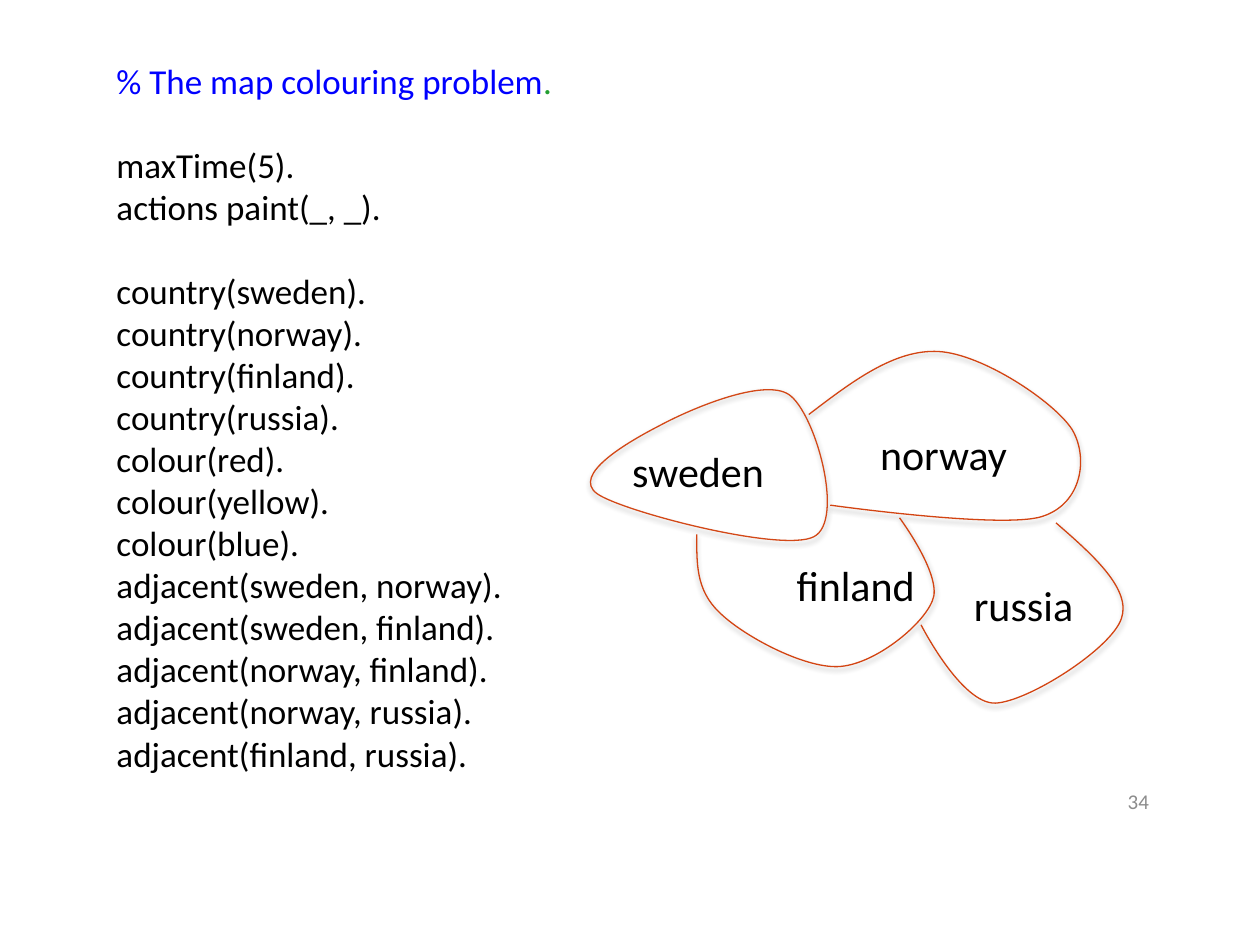
from lxml import etree
from pptx import Presentation
from pptx.dml.color import RGBColor
from pptx.enum.text import MSO_ANCHOR, PP_ALIGN
from pptx.oxml.ns import qn
from pptx.util import Pt

RIGHT = PP_ALIGN.RIGHT
TOP, MIDDLE = MSO_ANCHOR.TOP, MSO_ANCHOR.MIDDLE

THEME = {
    "font": "Calibri",
    "text": RGBColor(0, 0, 0),
    "comment": RGBColor(0x00, 0x00, 0xFF),
    "full_stop": RGBColor(0x22, 0x9E, 0x31),
    "page_number": RGBColor(0x8C, 0x8C, 0x8C),
    "code_size": 20,
    "label_size": 24,
    "page_number_size": 12,
    "border_width": 0.75,
}
SWEDEN_BORDER = RGBColor(0xD3, 0x48, 0x17)
OTHER_BORDER = RGBColor(0xD3, 0x44, 0x12)

COMMENT = "% The map colouring problem"
# Each group of lines is set off from the one before by a line's height.
CODE_GROUPS = [
    [COMMENT],
    ["maxTime(5).", "actions paint(_, _)."],
    [
        "country(sweden).", "country(norway).", "country(finland).", "country(russia).",
        "colour(red).", "colour(yellow).", "colour(blue).",
        "adjacent(sweden, norway).", "adjacent(sweden, finland).",
        "adjacent(norway, finland).", "adjacent(norway, russia).",
        "adjacent(finland, russia).",
    ],
]
CODE_BOX = (59.5, 30.6, 629.3, 441.4)
LINE_HEIGHT = 24
PAGE_NUMBER, PAGE_NUMBER_BOX = "34", (495.8, 443.5, 167.8, 28.8)

# Border: a start point, then two control points and an end point per curve.
COUNTRIES = [
    {"name": "sweden", "label_box": (354.2, 251.3, 100.8, 36),
     "color": SWEDEN_BORDER, "closed": True,
     "border": [(376.6, 243.4),
                (358.6, 252.7), (326.2, 271.4), (341.3, 282.2),
                (355.7, 292.3), (447.1, 316.1), (465.1, 306.7),
                (483.1, 297.4), (465.8, 235.4), (450.7, 225.4),
                (436.3, 216), (395.3, 233.3), (376.6, 243.4)]},
    {"name": "norway", "label_box": (495.8, 241.2, 157.7, 36),
     "color": OTHER_BORDER, "closed": False,
     "border": [(462.2, 236.9),
                (486.7, 218.2), (511.2, 199.4), (536.4, 200.9),
                (561.6, 202.3), (602.6, 229.7), (612.7, 245.5),
                (622.1, 261.4), (618.5, 288), (595.4, 295.2),
                (572.4, 302.4), (474.5, 288.7), (474.5, 288.7)]},
    {"name": "finland", "label_box": (448.1, 316.1, 121.7, 36),
     "color": OTHER_BORDER, "closed": False,
     "border": [(398.2, 305.3),
                (398.2, 321.1), (397.4, 337), (411.1, 349.9),
                (424.1, 362.9), (458.6, 381.6), (478.8, 380.9),
                (499, 380.2), (527, 357.8), (532.8, 343.4),
                (539.3, 329.8), (514.1, 295.9), (514.1, 295.9)]},
    {"name": "russia", "label_box": (549.4, 327.6, 71.3, 36),
     "color": OTHER_BORDER, "closed": False,
     "border": [(603.4, 298.8),
                (625, 317.5), (646.6, 337), (640.8, 353.5),
                (635, 370.8), (587.5, 401), (568.8, 401.8),
                (549.4, 402.5), (526.3, 357.1), (526.3, 357.1)]},
]
SAMPLES_PER_CURVE = 24


def curve_extent(border, axis):
    """Return the least and greatest value a chain of Bézier curves reaches on an axis."""
    values = []
    for first in range(0, len(border) - 1, 3):
        a, b, c, d = (point[axis] for point in border[first:first + 4])
        for sample in range(SAMPLES_PER_CURVE + 1):
            t = sample / SAMPLES_PER_CURVE
            s = 1 - t
            values.append(a * s**3 + 3 * b * t * s**2 + 3 * c * t**2 * s + d * t**3)
    return min(values), max(values)


def bend_outline(shape, border):
    """Turn the straight segments of a freeform into Bézier curves and fit its frame."""
    (left, right), (top, bottom) = (curve_extent(border, axis) for axis in (0, 1))
    shape.left, shape.top = Pt(left), Pt(top)
    shape.width, shape.height = Pt(right - left), Pt(bottom - top)
    outline = next(shape._element.iter(qn("a:path")))
    outline.set("w", str(shape.width))
    outline.set("h", str(shape.height))

    def place(node, point):
        node.set("x", str(Pt(point[0] - left)))
        node.set("y", str(Pt(point[1] - top)))

    place(outline.find(qn("a:moveTo"))[0], border[0])
    for index, segment in enumerate(outline.findall(qn("a:lnTo"))):
        curve = etree.Element(qn("a:cubicBezTo"))
        for point in border[3 * index + 1:3 * index + 4]:
            place(etree.SubElement(curve, qn("a:pt")), point)
        outline.replace(segment, curve)


def add_soft_shadow(shape):
    shape.shadow.inherit = False
    effects = shape._element.spPr.find(qn("a:effectLst"))
    shadow = etree.SubElement(
        effects, qn("a:outerShdw"), blurRad=str(Pt(3.1)), dist=str(Pt(1.8)),
        dir="5400000", rotWithShape="0")
    color = etree.SubElement(shadow, qn("a:srgbClr"), val="000000")
    etree.SubElement(color, qn("a:alpha"), val="35000")


def add_border(slide, country):
    border = country["border"]
    ends = [(Pt(x), Pt(y)) for x, y in border[::3]]
    builder = slide.shapes.build_freeform(*ends[0])
    builder.add_line_segments(ends[1:], close=country["closed"])
    shape = builder.convert_to_shape()
    bend_outline(shape, border)
    shape.fill.background()
    shape.line.color.rgb = country["color"]
    shape.line.width = Pt(THEME["border_width"])
    add_soft_shadow(shape)


def style_paragraph(paragraph, size, color):
    paragraph.font.name = THEME["font"]
    paragraph.font.size = Pt(size)
    paragraph.font.color.rgb = color


def add_text_frame(slide, box, anchor=TOP):
    frame = slide.shapes.add_textbox(*map(Pt, box)).text_frame
    frame.word_wrap = True
    frame.vertical_anchor = anchor
    return frame


def add_line_of_text(slide, text, box, size, color, anchor=TOP):
    paragraph = add_text_frame(slide, box, anchor).paragraphs[0]
    paragraph.text = text
    style_paragraph(paragraph, size, color)
    return paragraph


def add_code(slide):
    frame = add_text_frame(slide, CODE_BOX)
    for group_index, group in enumerate(CODE_GROUPS):
        for line_index, line in enumerate(group):
            is_first = group_index == line_index == 0
            paragraph = frame.paragraphs[0] if is_first else frame.add_paragraph()
            style_paragraph(paragraph, THEME["code_size"], THEME["text"])
            if line_index == 0 and not is_first:
                paragraph.space_before = Pt(LINE_HEIGHT)
            run = paragraph.add_run()
            run.text = line
            if line == COMMENT:
                run.font.color.rgb = THEME["comment"]
                full_stop = paragraph.add_run()
                full_stop.text = "."
                full_stop.font.color.rgb = THEME["full_stop"]


def main():
    presentation = Presentation()
    presentation.slide_width, presentation.slide_height = Pt(720), Pt(540)
    slide = presentation.slides.add_slide(presentation.slide_layouts[6])
    number = add_line_of_text(slide, PAGE_NUMBER, PAGE_NUMBER_BOX,
                              THEME["page_number_size"], THEME["page_number"], MIDDLE)
    number.alignment = RIGHT
    add_code(slide)
    for country in COUNTRIES:
        add_border(slide, country)
    for country in COUNTRIES:
        add_line_of_text(slide, country["name"], country["label_box"],
                         THEME["label_size"], THEME["text"])
    presentation.save("out.pptx")


if __name__ == "__main__":
    main()
